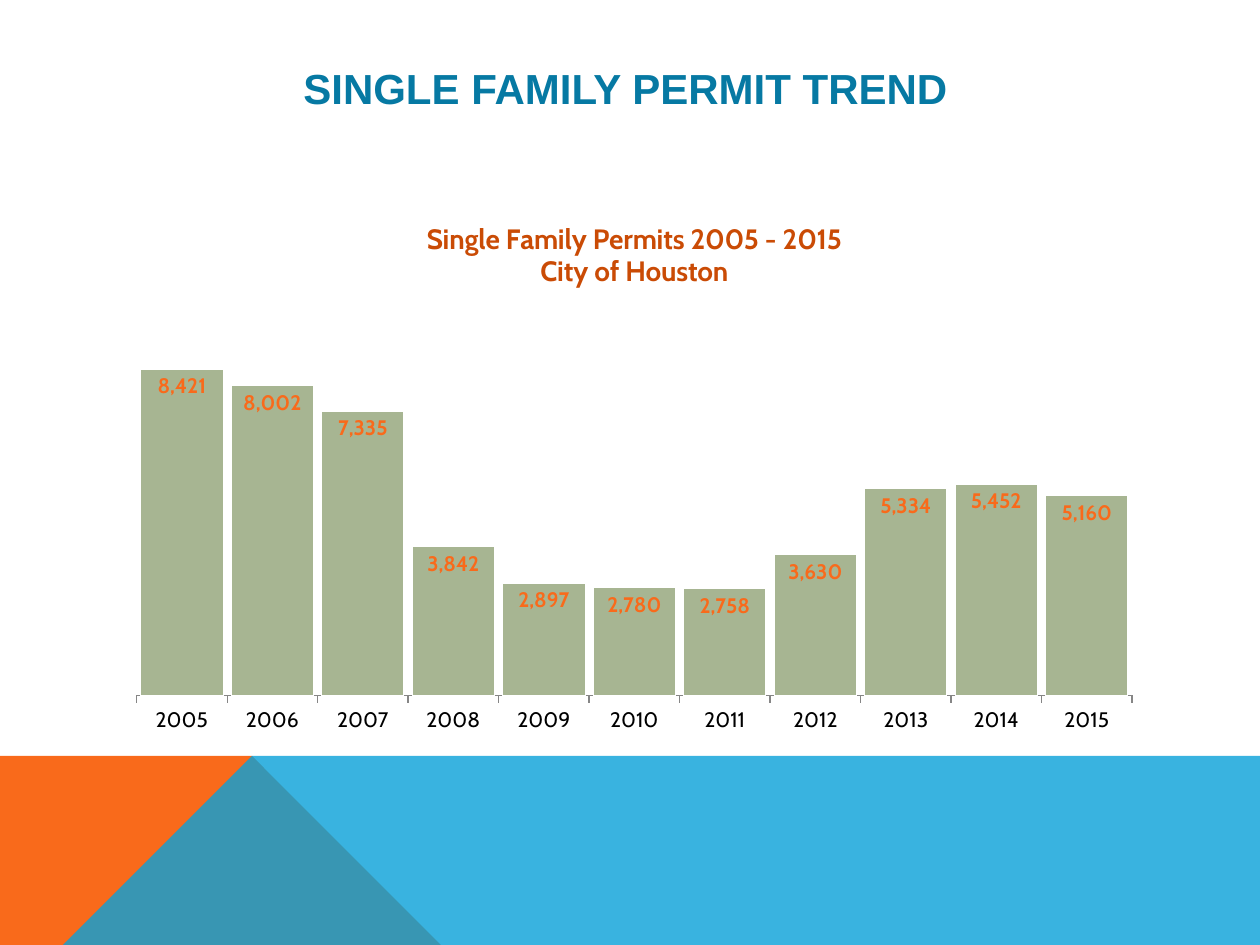
"""Build the single family permit trend slide."""
from lxml import etree
from pptx import Presentation
from pptx import util as u
from pptx.chart.data import CategoryChartData
from pptx.dml.color import RGBColor
from pptx.enum import chart as ch, text
from pptx.oxml import parse_xml
from pptx.oxml.ns import nsdecls, qn

TITLE = "SINGLE FAMILY PERMIT TREND "
HEADS = ["Single Family Permits 2005 - 2015", "City of Houston"]
START = 2005
COUNTS = [8421, 8002, 7335, 3842, 2897, 2780, 2758, 3630, 5334, 5452, 5160]
BANDS = [
    ("F96A1B", 100, [(0, 7.5), (0, 5.52), (2.23, 5.52), (3.91, 7.5)]),
    ("08A1D9", 80, [(0, 7.5), (2.23, 5.52), (10, 5.53), (10, 7.5)]),
]
PLOT = {"x": 0.02, "y": 0.2, "w": 0.96, "h": 0.71}


def paint(color, code):
    color.rgb = RGBColor.from_string(code)


def style(font, size, code, bold=False, face="Cabin"):
    font.size, font.bold, font.name = u.Pt(size), bold, face
    paint(font.color, code)


def add_band(slide, code, alpha, points):
    pen = slide.shapes.build_freeform(*points[0], scale=u.Inches(1))
    pen.add_line_segments(points[1:], close=True)
    band = pen.convert_to_shape()
    band.shadow.inherit = False
    band.line.fill.background()
    band.fill.solid()
    paint(band.fill.fore_color, code)
    if alpha < 100:
        tint = band.fill._xPr.find(".//" + qn("a:srgbClr"))
        etree.SubElement(tint, qn("a:alpha"), val=str(alpha * 1000))


def add_title(slide):
    box = slide.shapes.add_textbox(*map(u.Inches, (0.9, 0.4, 8.22, 0.6)))
    frame = box.text_frame
    frame.word_wrap = True
    frame.vertical_anchor = text.MSO_ANCHOR.MIDDLE
    para = frame.paragraphs[0]
    para.text, para.alignment = TITLE, text.PP_ALIGN.CENTER
    style(para.font, 24, "0679A3", True, "Arial")


def place_plot(chart):
    area = chart._chartSpace.find(".//" + qn("c:plotArea"))
    for old in area.findall(qn("c:layout")):
        area.remove(old)
    modes = "".join(f'<c:{k}Mode val="edge"/>' for k in "xy")
    sizes = "".join(f'<c:{k} val="{v}"/>' for k, v in PLOT.items())
    area.insert(0, parse_xml(
        f'<c:layout {nsdecls("c")}><c:manualLayout>'
        f'<c:layoutTarget val="inner"/>{modes}{sizes}'
        '</c:manualLayout></c:layout>'))


def add_chart(slide):
    data = CategoryChartData(number_format="#,##0")
    data.categories = [str(START + i) for i in range(len(COUNTS))]
    data.add_series("Series 1", COUNTS)
    area = map(u.Inches, (0.92, 1.58, 8.23, 4.33))
    chart = slide.shapes.add_chart(
        ch.XL_CHART_TYPE.COLUMN_CLUSTERED, *area, data).chart
    style(chart.font, 10, "000000")
    chart.has_legend = False
    chart.has_title = True
    frame = chart.chart_title.text_frame
    frame.text = "\n".join(HEADS)
    for para in frame.paragraphs:
        style(para.font, 16, "CA4B05", True)
    chart.chart_title.include_in_layout = False
    place_plot(chart)

    vals = chart.value_axis
    vals.visible = vals.has_major_gridlines = False
    vals.minimum_scale, vals.maximum_scale, vals.major_unit = 0, 10000, 2000
    vals.tick_labels.number_format = "#,##0"
    vals.tick_labels.number_format_is_linked = False
    cats = chart.category_axis
    cats.has_major_gridlines = False
    cats.major_tick_mark = ch.XL_TICK_MARK.OUTSIDE
    style(cats.tick_labels.font, 12, "000000")
    paint(cats.format.line.color, "868686")

    plot = chart.plots[0]
    plot.gap_width, plot.vary_by_categories = 10, False
    bars = plot.series[0]
    bars.format.fill.solid()
    paint(bars.format.fill.fore_color, "A7B592")
    paint(bars.format.line.color, "FFFFFF")
    tags = bars.data_labels
    tags.show_value = True
    tags.position = ch.XL_LABEL_POSITION.INSIDE_END
    tags.number_format, tags.number_format_is_linked = "#,##0", False
    style(tags.font, 12, "F96A1B", True)


def main():
    deck = Presentation()
    deck.slide_width, deck.slide_height = u.Inches(10), u.Inches(7.5)
    slide = deck.slides.add_slide(deck.slide_layouts[6])
    for band in BANDS:
        add_band(slide, *band)
    add_title(slide)
    add_chart(slide)
    deck.save("out.pptx")


if __name__ == "__main__":
    main()
